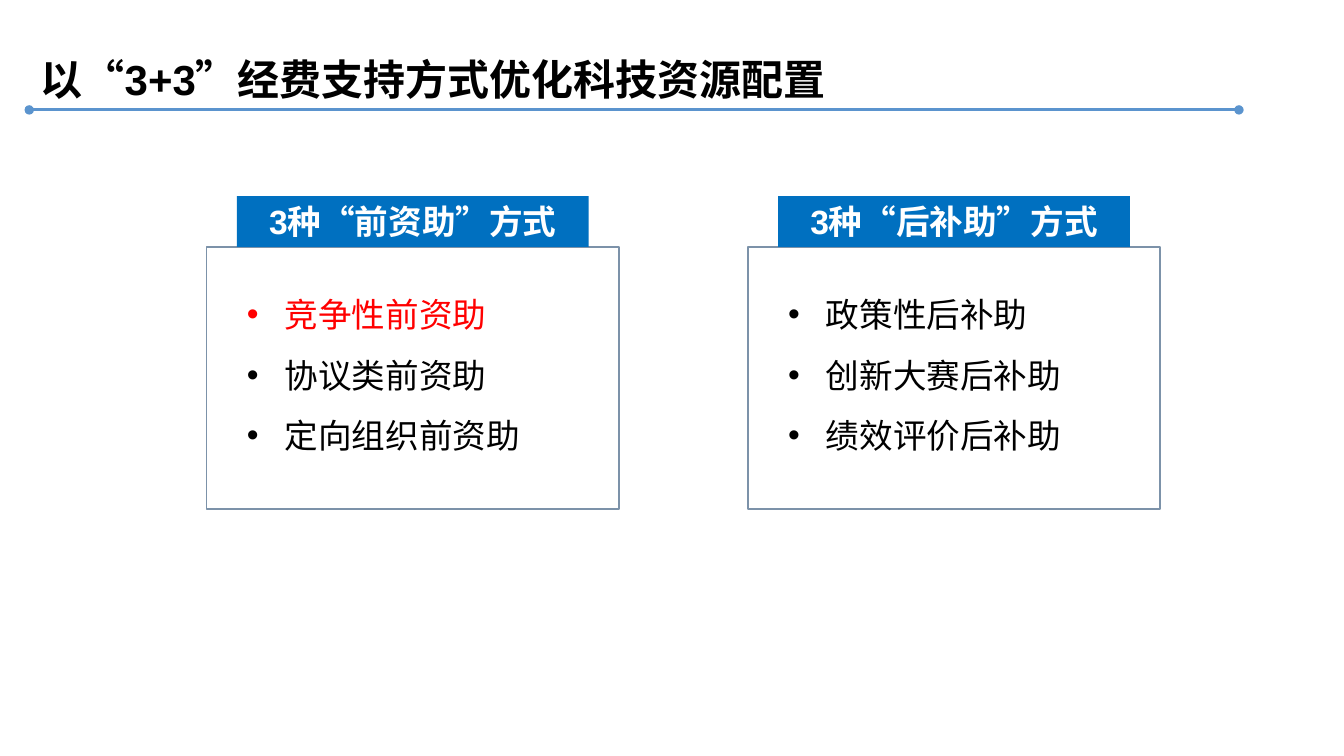
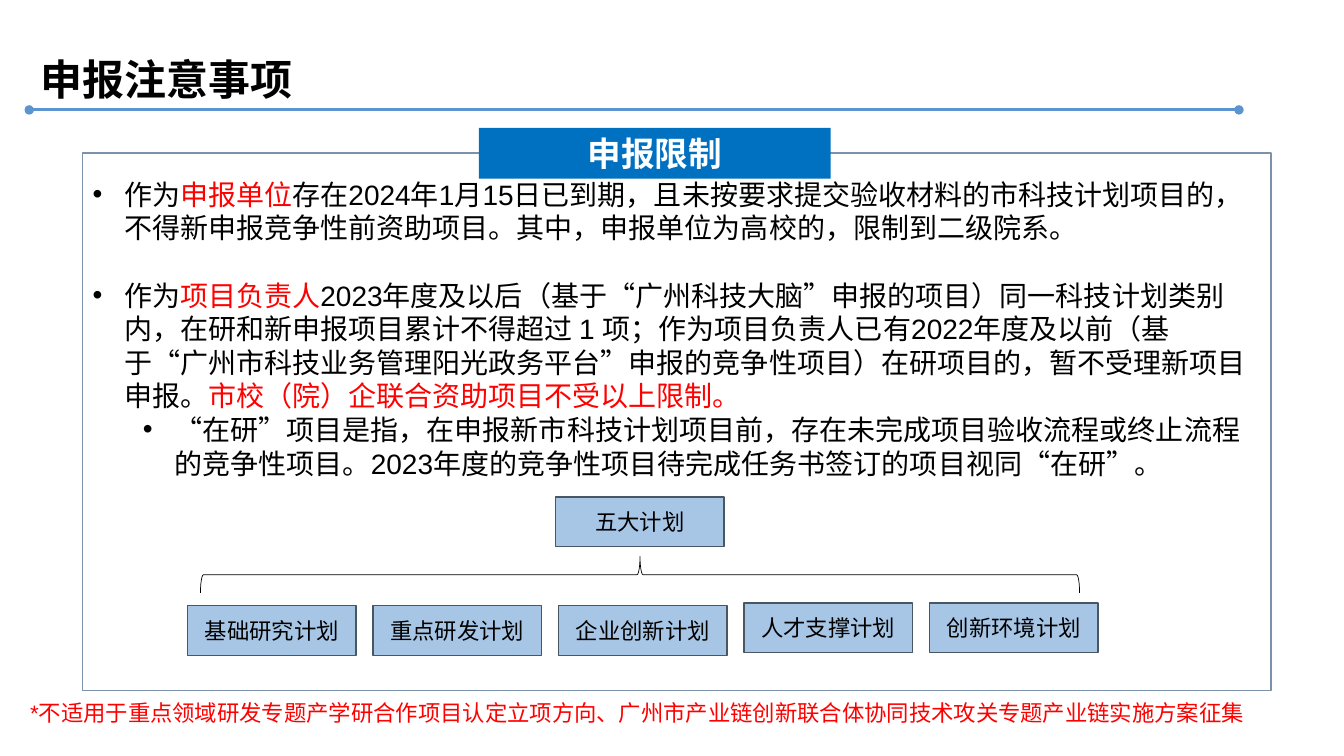
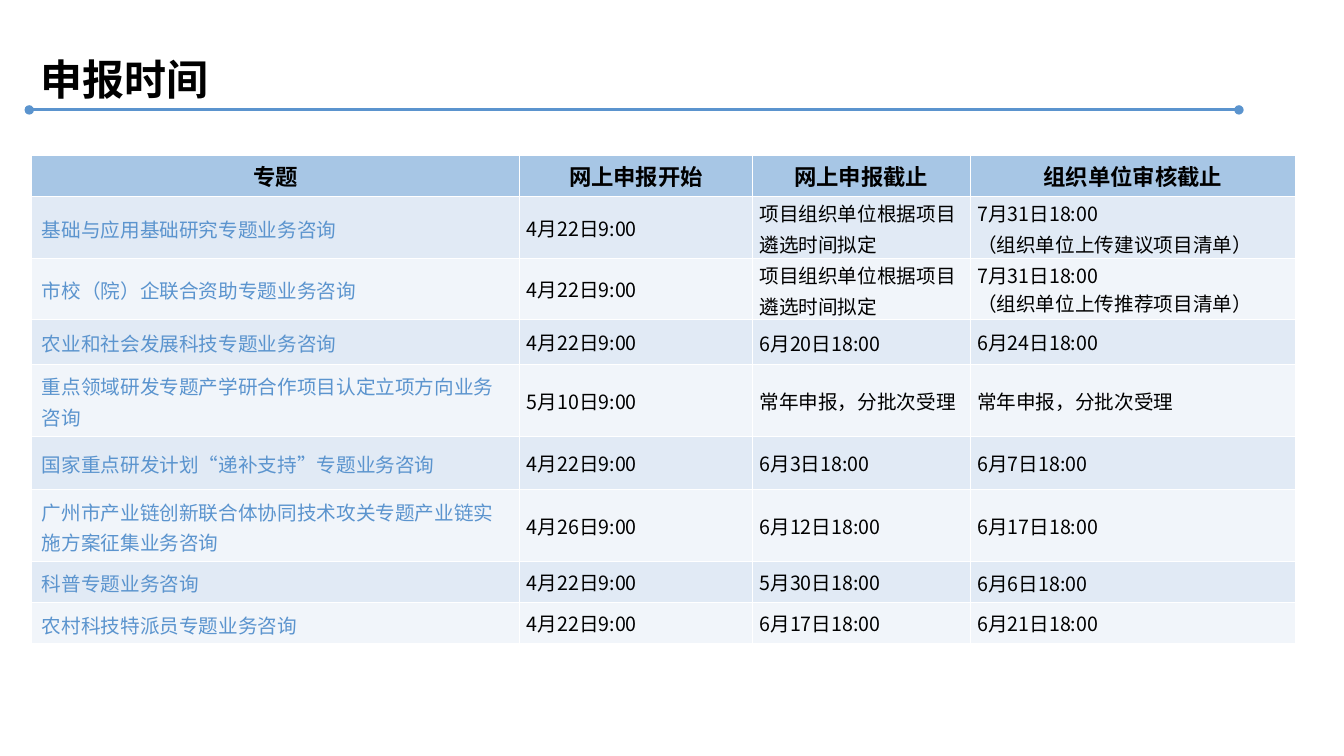
from dataclasses import dataclass
from typing import Optional

from pptx import Presentation
from pptx.dml.color import RGBColor as Rgb
from pptx.enum.shapes import MSO_CONNECTOR as Link, MSO_SHAPE as Form
from pptx.enum.text import MSO_ANCHOR as Anchor, PP_ALIGN as Align
from pptx.oxml.ns import qn
from pptx.oxml.xmlchemy import OxmlElement as Node
from pptx.util import Pt


@dataclass(frozen=True)
class Theme:
    black: str = "000000"
    white: str = "FFFFFF"
    red: str = "FF0000"
    rule: str = "5B94CE"
    frame: str = "7C92A9"
    banner: str = "0070C0"
    plan: str = "A7C6E5"
    edge: str = "495764"
    bands: tuple = ("F1F5FA", "E1EAF5")
    latin: str = "Arial"
    hans: str = "Noto Sans CJK SC"
    title: int = 30
    head: int = 24
    body: int = 20
    note: int = 16
    cell: int = 14


T = Theme()


@dataclass(frozen=True)
class Box:
    left: float
    top: float
    width: float
    height: float

    def points(self) -> tuple:
        return Pt(self.left), Pt(self.top), Pt(self.width), Pt(self.height)


@dataclass(frozen=True)
class Style:
    size: int
    color: str = T.black
    face: str = T.latin
    bold: bool = False
    align: Optional[Align] = None
    space: object = None
    bullet: bool = False
    margin: float = 0
    hang: float = 0


@dataclass(frozen=True)
class Para:
    runs: tuple
    style: Style
    before: float = 0


@dataclass(frozen=True)
class Panel:
    left: float
    head: str
    items: tuple


def add_node(parent, tag: str, **attrs: str) -> None:
    node = Node(tag)
    for key, value in attrs.items():
        node.set(key, value)
    parent.append(node)


def write(frame, paras: list) -> None:
    frame.word_wrap = True
    for index, item in enumerate(paras):
        para = frame.paragraphs[0] if index == 0 else frame.add_paragraph()
        style = item.style
        props = para._p.get_or_add_pPr()
        if style.bullet:
            props.set("marL", str(Pt(style.margin)))
            props.set("indent", str(Pt(-style.hang)))
            add_node(props, "a:buFont", typeface=T.latin)
            add_node(props, "a:buChar", char="•")
        font = para.font
        font.size, font.bold, font.name = Pt(style.size), style.bold, style.face
        font.color.rgb = Rgb.from_string(style.color)
        add_node(props.find(qn("a:defRPr")), "a:ea", typeface=T.hans)
        if style.align is not None:
            para.alignment = style.align
        if style.space:
            para.line_spacing = style.space
        if item.before:
            para.space_before = Pt(item.before)
        for text, color in item.runs:
            run = para.add_run()
            run.text = text
            if color:
                run.font.color.rgb = Rgb.from_string(color)


def plain(text: str, style: Style) -> Para:
    return Para(((text, None),), style)


def add_text(slide, box: Box, paras: list) -> None:
    write(slide.shapes.add_textbox(*box.points()).text_frame, paras)


def add_form(slide, box: Box, fill: Optional[str], line: Optional[str],
             width: float = 1, form: Form = Form.RECTANGLE):
    shape = slide.shapes.add_shape(form, *box.points())
    shape.shadow.inherit = False
    if fill:
        shape.fill.solid()
        shape.fill.fore_color.rgb = Rgb.from_string(fill)
    else:
        shape.fill.background()
    if line:
        shape.line.color.rgb = Rgb.from_string(line)
        shape.line.width = Pt(width)
    else:
        shape.line.fill.background()
    return shape


def add_banner(slide, left: float, top: float, text: str) -> None:
    shape = add_form(slide, Box(left, top, 251.3, 36.3), T.banner, None)
    write(shape.text_frame, [plain(text, Style(T.head, T.white, bold=True, align=Align.CENTER))])


def add_plan(slide, left: float, top: float, text: str) -> None:
    shape = add_form(slide, Box(left, top, 120.5, 35.5), T.plan, T.edge)
    write(shape.text_frame, [plain(text, Style(T.note, align=Align.CENTER))])


def new_slide(deck, title: str, face: str = T.hans):
    slide = deck.slides.add_slide(deck.slide_layouts[6])
    rule = slide.shapes.add_connector(Link.STRAIGHT, Pt(20.9), Pt(78.5), Pt(885), Pt(78.5))
    rule.line.color.rgb = Rgb.from_string(T.rule)
    rule.line.width = Pt(2.25)
    for tag in ("a:headEnd", "a:tailEnd"):
        add_node(rule.line._get_or_add_ln(), tag, type="oval")
    add_node(rule._element.spPr, "a:effectLst")
    add_text(slide, Box(22, 17, 770, 62),
             [plain(title, Style(T.title, face=face, bold=True, space=1.5))])
    return slide


PANELS = (
    Panel(147.6, "3种“前资助”方式", (("竞争性前资助", T.red), ("协议类前资助", T.black),
                               ("定向组织前资助", T.black))),
    Panel(534.2, "3种“后补助”方式", (("政策性后补助", T.black), ("创新大赛后补助", T.black),
                               ("绩效评价后补助", T.black))),
)


def draw_funds(deck) -> None:
    slide = new_slide(deck, "以“3+3”经费支持方式优化科技资源配置", T.latin)
    for panel in PANELS:
        inner = panel.left + 21.6
        add_form(slide, Box(panel.left, 176.4, 294.5, 187.2), T.white, T.frame)
        add_text(slide, Box(inner, 192.2, 251.3, 138.2), [
            plain(text, Style(T.head, color, T.hans, space=1.5, bullet=True, margin=27, hang=27))
            for text, color in panel.items])
        add_banner(slide, inner, 140, panel.head)


RULE = Style(T.body, bullet=True, margin=22.5, hang=22.5)
SUB = Style(T.body, bullet=True, margin=58.5, hang=22.5)
LIMITS = [
    Para((("作为", None), ("申报单位", T.red),
          ("存在2024年1月15日已到期，且未按要求提交验收材料的市科技计划项目的，不得新申报竞争性前资助项目。"
           "其中，申报单位为高校的，限制到二级院系。", None)), RULE),
    Para((("作为", None), ("项目负责人", T.red),
          ("2023年度及以后（基于“广州科技大脑”申报的项目）同一科技计划类别内，在研和新申报项目累计不得超过 1 项；"
           "作为项目负责人已有2022年度及以前（基于“广州市科技业务管理阳光政务平台”申报的竞争性项目）在研项目的，"
           "暂不受理新项目申报。", None),
          ("市校（院）企联合资助项目不受以上限制。", T.red)), RULE, before=24),
    plain("“在研”项目是指，在申报新市科技计划项目前，存在未完成项目验收流程或终止流程的竞争性项目。"
          "2023年度的竞争性项目待完成任务书签订的项目视同“在研”。", SUB),
]
PLANS = ("基础研究计划", "重点研发计划", "企业创新计划", "人才支撑计划", "创新环境计划")
NOTE = "*不适用于重点领域研发专题产学研合作项目认定立项方向、广州市产业链创新联合体协同技术攻关专题产业链实施方案征集"


def draw_limits(deck) -> None:
    slide = new_slide(deck, "申报注意事项")
    add_form(slide, Box(59, 109.4, 849, 383.8), T.white, T.frame)
    add_banner(slide, 342, 91.4, "申报限制")
    add_text(slide, Box(59, 123.1, 841.7, 273.6), LIMITS)
    add_text(slide, Box(14.4, 496, 932, 26.6), [plain(NOTE, Style(T.note, T.red))])
    for index, text in enumerate(PLANS):
        add_plan(slide, 133.9 + index * 132.5, 432.7 if index < 3 else 430.6, text)
    brace = add_form(slide, Box(444.2, 96.5, 26, 628), None, T.black, 0.5, Form.RIGHT_BRACE)
    brace.rotation = 270
    add_plan(slide, 396.7, 355, "五大计划")


COLS = (348.5, 166.3, 155.5, 232.6)
ROWS = (28.8, 44, 44, 32, 51.5, 38, 51, 29.5, 29)
SPACED = {(1, 2), (2, 2), (3, 2), (1, 3), (7, 3)}
DATES = (
    ("专题", "网上申报开始", "网上申报截止", "组织单位审核截止"),
    ("基础与应用基础研究专题业务咨询", "4月22日9:00", "项目组织单位根据项目遴选时间拟定",
     "7月31日18:00\n（组织单位上传建议项目清单）"),
    ("市校（院）企联合资助专题业务咨询", "4月22日9:00", "项目组织单位根据项目遴选时间拟定",
     "7月31日18:00\n（组织单位上传推荐项目清单）"),
    ("农业和社会发展科技专题业务咨询", "4月22日9:00", "6月20日18:00", "6月24日18:00"),
    ("重点领域研发专题产学研合作项目认定立项方向业务咨询", "5月10日9:00",
     "常年申报，分批次受理", "常年申报，分批次受理"),
    ("国家重点研发计划“递补支持”专题业务咨询", "4月22日9:00", "6月3日18:00", "6月7日18:00"),
    ("广州市产业链创新联合体协同技术攻关专题产业链实施方案征集业务咨询", "4月26日9:00",
     "6月12日18:00", "6月17日18:00"),
    ("科普专题业务咨询", "4月22日9:00", "5月30日18:00", "6月6日18:00"),
    ("农村科技特派员专题业务咨询", "4月22日9:00", "6月17日18:00", "6月21日18:00"),
)


def cell_style(row: int, col: int) -> Style:
    if row == 0:
        return Style(T.note, face=T.hans, bold=True, align=Align.CENTER, space=Pt(22))
    space = Pt(22) if col == 0 or (row, col) in SPACED else None
    return Style(T.cell, T.black if col else T.rule, T.hans, space=space)


def draw_dates(deck) -> None:
    slide = new_slide(deck, "申报时间")
    box = Box(22.7, 111.2, sum(COLS), sum(ROWS))
    table = slide.shapes.add_table(len(ROWS), len(COLS), *box.points()).table
    for col, width in zip(table.columns, COLS):
        col.width = Pt(width)
    for row, height in zip(table.rows, ROWS):
        row.height = Pt(height)
    for row, texts in enumerate(DATES):
        for col, text in enumerate(texts):
            cell = table.cell(row, col)
            cell.vertical_anchor = Anchor.MIDDLE
            if col:
                cell.margin_left = cell.margin_right = Pt(5)
                cell.margin_top = cell.margin_bottom = Pt(0)
            cell.fill.solid()
            cell.fill.fore_color.rgb = Rgb.from_string(T.bands[row % 2] if row else T.plan)
            style = cell_style(row, col)
            write(cell.text_frame, [plain(line, style) for line in text.split("\n")])


def main() -> None:
    deck = Presentation()
    deck.slide_width, deck.slide_height = Pt(960), Pt(540)
    draw_funds(deck)
    draw_limits(deck)
    draw_dates(deck)
    deck.save("out.pptx")


if __name__ == "__main__":
    main()
